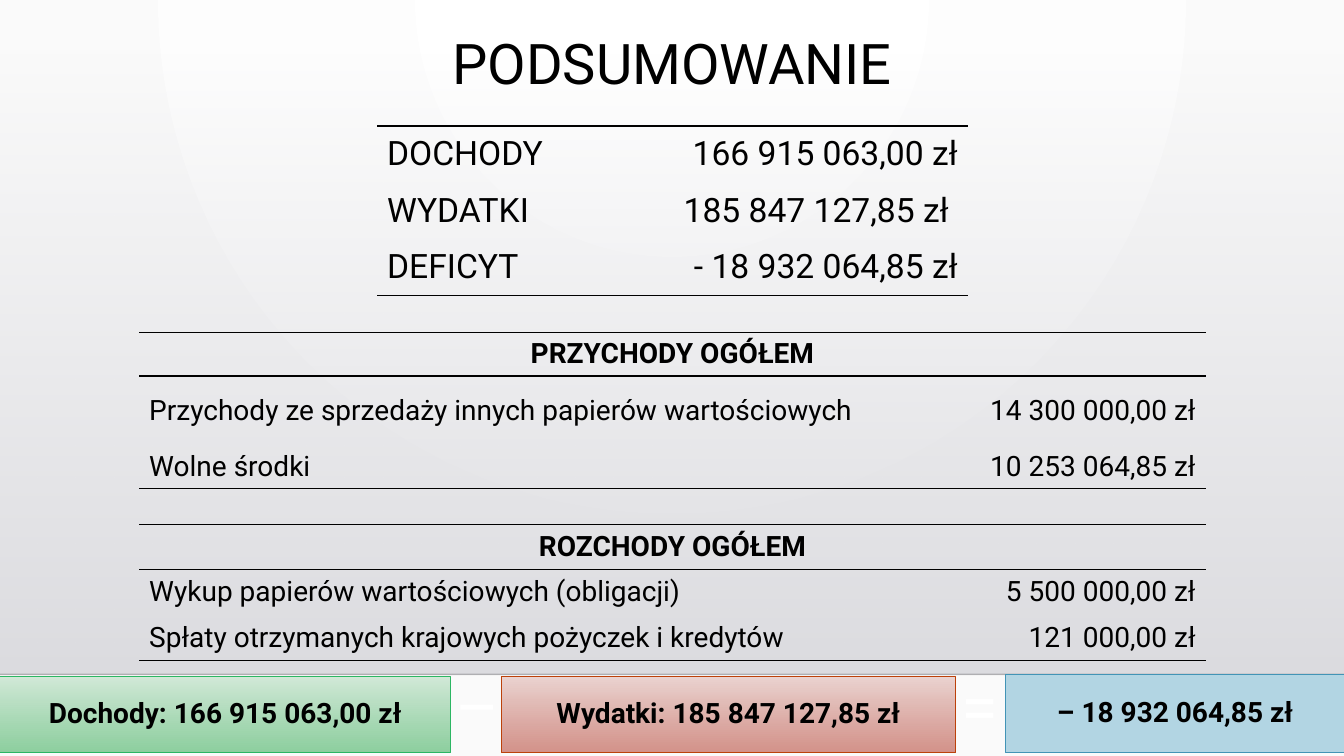
from lxml import etree
from pptx import Presentation
from pptx.dml.color import RGBColor
from pptx.enum.shapes import MSO_CONNECTOR, MSO_SHAPE
from pptx.enum.text import MSO_ANCHOR, MSO_AUTO_SIZE, PP_ALIGN
from pptx.oxml import parse_xml
from pptx.oxml.ns import nsdecls, qn
from pptx.util import Inches, Pt

STRAIGHT = MSO_CONNECTOR.STRAIGHT
RECTANGLE = MSO_SHAPE.RECTANGLE
MIDDLE = MSO_ANCHOR.MIDDLE
GROW = MSO_AUTO_SIZE.SHAPE_TO_FIT_TEXT
LEFT, CENTER, RIGHT = PP_ALIGN.LEFT, PP_ALIGN.CENTER, PP_ALIGN.RIGHT

FONT = "Roboto"
WIDTH, HEIGHT = 13.33, 7.5
PANEL_TOP, PANEL_BOTTOM = 0.51, 6.69
NO_GRID_STYLE = "{2D5ABB26-0587-4C30-8999-92F81FD0307C}"
DOWNWARD = '<a:lin ang="5400000" scaled="0"/>'
FROM_TOP = ('<a:path path="circle"><a:fillToRect l="43000" t="0" '
            'r="43000" b="100000"/></a:path>')

BLACK = RGBColor(0x00, 0x00, 0x00)
WHITE = RGBColor(0xFF, 0xFF, 0xFF)
OFF_WHITE = RGBColor(0xFA, 0xFA, 0xFA)
PANEL_LIGHT = RGBColor(0xDC, 0xDC, 0xE0)
PANEL_GREY = RGBColor(0xDE, 0xDE, 0xE2)
GREEN_LIGHT = RGBColor(0xD2, 0xE9, 0xD8)
GREEN = RGBColor(0x85, 0xCC, 0x98)
GREEN_EDGE = RGBColor(0x2C, 0xB6, 0x63)
RED_LIGHT = RGBColor(0xEB, 0xD4, 0xD1)
RED = RGBColor(0xD1, 0x8A, 0x81)
RED_EDGE = RGBColor(0xBC, 0x41, 0x0A)
BLUE = RGBColor(0xB2, 0xD5, 0xE3)
BLUE_EDGE = RGBColor(0x42, 0x94, 0xB6)


def add_alpha(color, percent):
    etree.SubElement(color, qn("a:alpha")).set("val", str(percent * 1000))


def paint_gradient(element, stops, direction):
    gradient = parse_xml(f'<a:gradFill {nsdecls("a")} rotWithShape="1">'
                         f'<a:gsLst/>{direction}</a:gradFill>')
    for position, (color, opacity) in zip((0, 100000), stops):
        stop = etree.SubElement(gradient[0], qn("a:gs"))
        stop.set("pos", str(position))
        tint = etree.SubElement(stop, qn("a:srgbClr"))
        tint.set("val", str(color))
        if opacity < 100:
            add_alpha(tint, opacity)
    solid = element.find(".//" + qn("a:solidFill"))
    solid.getparent().replace(solid, gradient)


def write(frame, text, size, align, color=BLACK, bold=False):
    frame.text = text
    paragraph = frame.paragraphs[0]
    paragraph.alignment = align
    font = paragraph.runs[0].font
    font.name, font.size, font.bold = FONT, Pt(size), bold
    font.color.rgb = color
    return paragraph


def add_block(slide, left, top, width, height, fill):
    block = slide.shapes.add_shape(RECTANGLE, Inches(left), Inches(top),
                                   Inches(width), Inches(height))
    block.shadow.inherit = False
    block.fill.solid()
    block.fill.fore_color.rgb = fill
    block.line.fill.background()
    return block


def add_label(slide, left, top, width, height, text, size, color):
    label = slide.shapes.add_textbox(Inches(left), Inches(top),
                                     Inches(width), Inches(height))
    label.text_frame.word_wrap = True
    label.text_frame.auto_size = GROW
    write(label.text_frame, text, size, CENTER, color)


def add_backdrop(slide):
    slide.background.fill.solid()
    paint_gradient(slide.element, ((WHITE, 100), (OFF_WHITE, 100)), FROM_TOP)
    panel = add_block(slide, 0, PANEL_TOP, WIDTH, PANEL_BOTTOM - PANEL_TOP, PANEL_GREY)
    paint_gradient(panel.element, ((PANEL_LIGHT, 0), (PANEL_GREY, 100)), DOWNWARD)
    edge = slide.shapes.add_connector(STRAIGHT, 0, Inches(PANEL_BOTTOM),
                                      Inches(WIDTH), Inches(PANEL_BOTTOM))
    edge.line.color.rgb = BLACK
    edge.line.width = Pt(1)
    properties = edge.element.spPr
    add_alpha(properties.find(".//" + qn("a:srgbClr")), 20)
    etree.SubElement(properties, qn("a:effectLst"))


def rule_cell(cell, sides):
    properties = cell._tc.get_or_add_tcPr()
    for index, side in enumerate(sides):
        properties.insert(index, parse_xml(
            f'<a:ln{side} {nsdecls("a")} w="12700"><a:solidFill>'
            f'<a:srgbClr val="{BLACK}"/></a:solidFill></a:ln{side}>'))


def add_amounts(slide, left, top, columns, heights, size, entries, heading=None):
    table = slide.shapes.add_table(len(heights), 2, Inches(left), Inches(top),
                                   Inches(sum(columns)), Inches(sum(heights))).table
    table.first_row = table.horz_banding = False
    table._tbl.tblPr.find(qn("a:tableStyleId")).text = NO_GRID_STYLE
    for column, width in zip(table.columns, columns):
        column.width = Inches(width)
    for row, height in zip(table.rows, heights):
        row.height = Inches(height)
    first = 1 if heading else 0
    for index, entry in enumerate(entries, first):
        for cell, text, align in zip(table.rows[index].cells, entry, (LEFT, RIGHT)):
            write(cell.text_frame, text, size, align)
    if heading:
        table.cell(0, 0).merge(table.cell(0, 1))
        write(table.cell(0, 0).text_frame, heading, size, CENTER, bold=True)
    last = len(heights) - 1
    for index, row in enumerate(table.rows):
        sides = "T" if index == 0 else ""
        if index == last or (heading and index == 0):
            sides += "B"
        for cell in row.cells:
            cell.vertical_anchor = MIDDLE
            cell.fill.background()
            rule_cell(cell, sides)
    return table


def add_total(slide, left, top, width, height, text, fill, edge, light=None):
    total = add_block(slide, left, top, width, height, fill)
    if light:
        paint_gradient(total.element, ((light, 100), (fill, 92)), DOWNWARD)
    total.line.color.rgb = edge
    total.line.width = Pt(0.75)
    frame = total.text_frame
    frame.word_wrap = True
    frame.vertical_anchor = MIDDLE
    frame.margin_left = frame.margin_right = Inches(0.27)
    frame.margin_top = frame.margin_bottom = Inches(0.27)
    write(frame, text, 20, CENTER, bold=True).line_spacing = 0.9


def add_equation(slide, top):
    add_total(slide, 0, top + 0.02, 4.47, 0.76, "Dochody: 166 915 063,00 zł",
              GREEN, GREEN_EDGE, GREEN_LIGHT)
    for left, operator in ((4.31, "–"), (9.29, "=")):
        add_label(slide, left, top - 0.15, 0.86, 0.91, operator, 48, WHITE)
    add_total(slide, 4.97, top + 0.02, 4.51, 0.76, "Wydatki: 185 847 127,85 zł",
              RED, RED_EDGE, RED_LIGHT)
    add_total(slide, 9.97, top, 3.37, 0.78, "– 18 932 064,85 zł", BLUE, BLUE_EDGE)


def main():
    deck = Presentation()
    deck.slide_width, deck.slide_height = Inches(WIDTH), Inches(HEIGHT)
    slide = deck.slides.add_slide(deck.slide_layouts[6])
    add_backdrop(slide)
    balance = add_amounts(slide, 3.74, 1.25, (2.93, 2.93), (0.56,) * 3, 24, (
        ("DOCHODY", "166 915 063,00 zł"),
        ("WYDATKI", "185 847 127,85 zł"),
        ("DEFICYT", "- 18 932 064,85 zł")))
    balance.cell(1, 1).margin_right = Inches(0.19)
    add_amounts(slide, 1.38, 3.3, (7.81, 2.77), (0.43, 0.69, 0.43), 20, (
        ("Przychody ze sprzedaży innych papierów wartościowych", "14 300 000,00 zł"),
        ("Wolne środki", "10 253 064,85 zł")), "PRZYCHODY OGÓŁEM")
    add_amounts(slide, 1.38, 5.2, (6.92, 3.66), (0.45,) * 3, 20, (
        ("Wykup papierów wartościowych (obligacji)", "5 500 000,00 zł"),
        ("Spłaty otrzymanych krajowych pożyczek i kredytów", "121 000,00 zł")),
        "ROZCHODY OGÓŁEM")
    add_label(slide, 0, 0.23, WIDTH, 0.77, "PODSUMOWANIE", 40, BLACK)
    add_equation(slide, PANEL_BOTTOM)
    deck.save("out.pptx")


if __name__ == "__main__":
    main()
